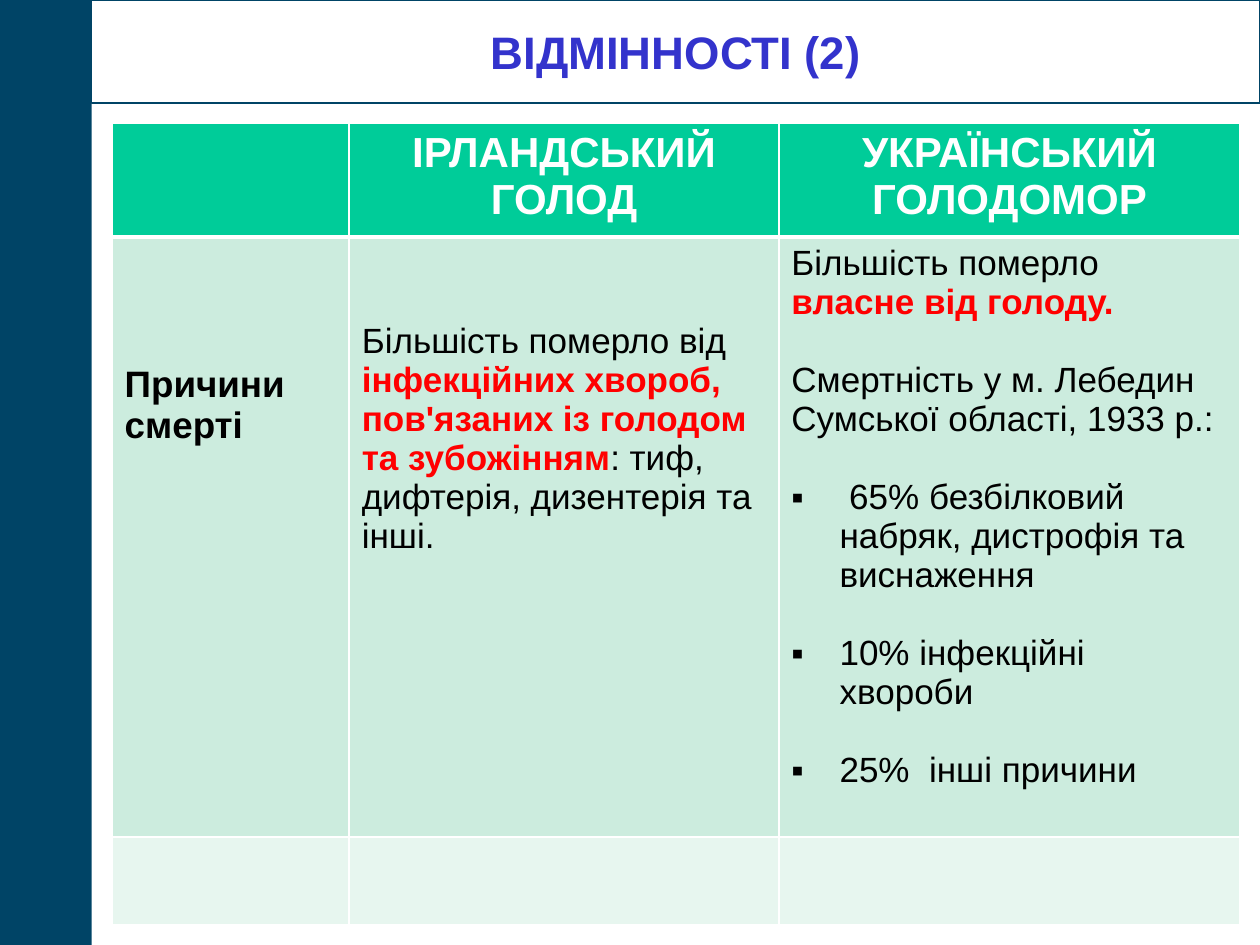
from lxml.etree import SubElement
from pptx import Presentation
from pptx.dml.color import RGBColor
from pptx.enum.shapes import MSO_SHAPE
from pptx.enum.text import MSO_ANCHOR, PP_ALIGN
from pptx.oxml import parse_xml
from pptx.oxml.ns import nsdecls, qn
from pptx.util import Cm, Pt

NAVY = RGBColor(0x00, 0x44, 0x66)
INDIGO = RGBColor(0x33, 0x33, 0xCC)
GREEN = RGBColor(0x00, 0xCC, 0x99)
MINT = RGBColor(0xCC, 0xEC, 0xDE)
PALE_MINT = RGBColor(0xE7, 0xF6, 0xEF)
RED = RGBColor(0xFF, 0x00, 0x00)
BLACK = RGBColor(0x00, 0x00, 0x00)
WHITE = RGBColor(0xFF, 0xFF, 0xFF)

SLIDE_WIDTH, SLIDE_HEIGHT = Cm(25.4), Cm(19.05)
SIDEBAR_WIDTH, TITLE_HEIGHT = Cm(1.85), Cm(2.08)
BULLET_INDENT = Cm(0.97)
BLANK_LINE = Pt(22.3)

COLUMN_WIDTHS = [Cm(4.78), Cm(8.66), Cm(9.3)]
ROW_HEIGHTS = [Cm(2.29), Cm(12.09), Cm(1.78)]
ROW_FILLS = [GREEN, MINT, PALE_MINT]
HEADINGS = ["", "ІРЛАНДСЬКИЙ ГОЛОД", "УКРАЇНСЬКИЙ ГОЛОДОМОР"]
IRISH_CAUSES = [
    ("Більшість померло від ", False),
    ("інфекційних хвороб, пов'язаних із голодом та зубожінням", True),
    (": тиф, дифтерія, дизентерія та інші.", False),
]
UKRAINIAN_CAUSES = [("Більшість померло ", False), ("власне від голоду.", True)]
MORTALITY_SOURCE = "Смертність у м. Лебедин Сумської області, 1933 р.:"
MORTALITY_SHARES = [
    " 65% безбілковий набряк, дистрофія та виснаження",
    "10% інфекційні хвороби",
    "25%  інші причини",
]


def write(paragraph, text, size=20, color=BLACK, bold=False,
          align=PP_ALIGN.LEFT, before=Pt(0), bullet=None):
    """Add one run to the paragraph and set the paragraph's format."""
    run = paragraph.add_run()
    run.text = text
    run.font.name = "Arial"
    run.font.size = Pt(size)
    run.font.bold = bold
    run.font.color.rgb = color
    paragraph.alignment = align
    paragraph.space_before = before
    if bullet:
        properties = paragraph._p.get_or_add_pPr()
        properties.set("marL", str(BULLET_INDENT))
        properties.set("indent", str(-BULLET_INDENT))
        SubElement(properties, qn("a:buFont"), typeface="Arial")
        SubElement(properties, qn("a:buChar"), char=bullet)


def write_emphasised(paragraph, parts):
    """Write (text, stressed) parts, the stressed ones bold and red."""
    for text, stressed in parts:
        write(paragraph, text, bold=stressed, color=RED if stressed else BLACK)


def add_panel(slide, left, top, width, height, fill, line=None):
    panel = slide.shapes.add_shape(MSO_SHAPE.RECTANGLE, left, top, width, height)
    panel.shadow.inherit = False
    panel.fill.solid()
    panel.fill.fore_color.rgb = fill
    if line is None:
        panel.line.fill.background()
    else:
        panel.line.color.rgb = line
        panel.line.width = Pt(0.75)
    return panel


def add_title(slide, left, top, width, height):
    title = add_panel(slide, left, top, width, height, WHITE, NAVY)
    title.text_frame.vertical_anchor = MSO_ANCHOR.MIDDLE
    write(title.text_frame.paragraphs[0], "ВІДМІННОСТІ (2)", size=26,
          color=INDIGO, bold=True, align=PP_ALIGN.CENTER)


def style_cell(cell, fill, top_width, bottom_width):
    """Fill the cell and give it white borders."""
    cell.fill.solid()
    cell.fill.fore_color.rgb = fill
    widths = {"lnL": 1, "lnR": 1, "lnT": top_width, "lnB": bottom_width}
    for position, (side, width) in enumerate(widths.items()):
        border = parse_xml(
            f'<a:{side} {nsdecls("a")} w="{Pt(width)}"><a:solidFill>'
            f'<a:srgbClr val="{WHITE}"/></a:solidFill></a:{side}>')
        cell._tc.get_or_add_tcPr().insert(position, border)


def write_ukrainian_causes(frame):
    write_emphasised(frame.paragraphs[0], UKRAINIAN_CAUSES)
    write(frame.add_paragraph(), MORTALITY_SOURCE, before=BLANK_LINE)
    for share in MORTALITY_SHARES:
        write(frame.add_paragraph(), share, before=BLANK_LINE, bullet="▪")


def add_comparison(slide, left, top):
    table = slide.shapes.add_table(
        len(ROW_HEIGHTS), len(COLUMN_WIDTHS), left, top,
        sum(COLUMN_WIDTHS), sum(ROW_HEIGHTS)).table
    for column, width in zip(table.columns, COLUMN_WIDTHS):
        column.width = width
    for index, (row, height) in enumerate(zip(table.rows, ROW_HEIGHTS)):
        row.height = height
        for cell in row.cells:
            style_cell(cell, ROW_FILLS[index],
                       top_width=3 if index == 1 else 1,
                       bottom_width=3 if index == 0 else 1)

    for cell, heading in zip(table.rows[0].cells, HEADINGS):
        if heading:
            write(cell.text_frame.paragraphs[0], heading, size=24,
                  color=WHITE, bold=True, align=PP_ALIGN.CENTER)

    topic, irish, ukrainian = table.rows[1].cells
    topic.margin_top = Cm(2.57)
    write(topic.text_frame.paragraphs[0], "Причини смерті", size=21, bold=True)
    irish.margin_top = Cm(1.7)
    write_emphasised(irish.text_frame.paragraphs[0], IRISH_CAUSES)
    write_ukrainian_causes(ukrainian.text_frame)


def main():
    presentation = Presentation()
    presentation.slide_width = SLIDE_WIDTH
    presentation.slide_height = SLIDE_HEIGHT
    slide = presentation.slides.add_slide(presentation.slide_layouts[6])
    add_panel(slide, 0, 0, SIDEBAR_WIDTH, SLIDE_HEIGHT, NAVY)
    add_title(slide, SIDEBAR_WIDTH, 0, SLIDE_WIDTH - SIDEBAR_WIDTH, TITLE_HEIGHT)
    add_comparison(slide, SIDEBAR_WIDTH + Cm(0.41), TITLE_HEIGHT + Cm(0.41))
    presentation.save("out.pptx")


if __name__ == "__main__":
    main()
